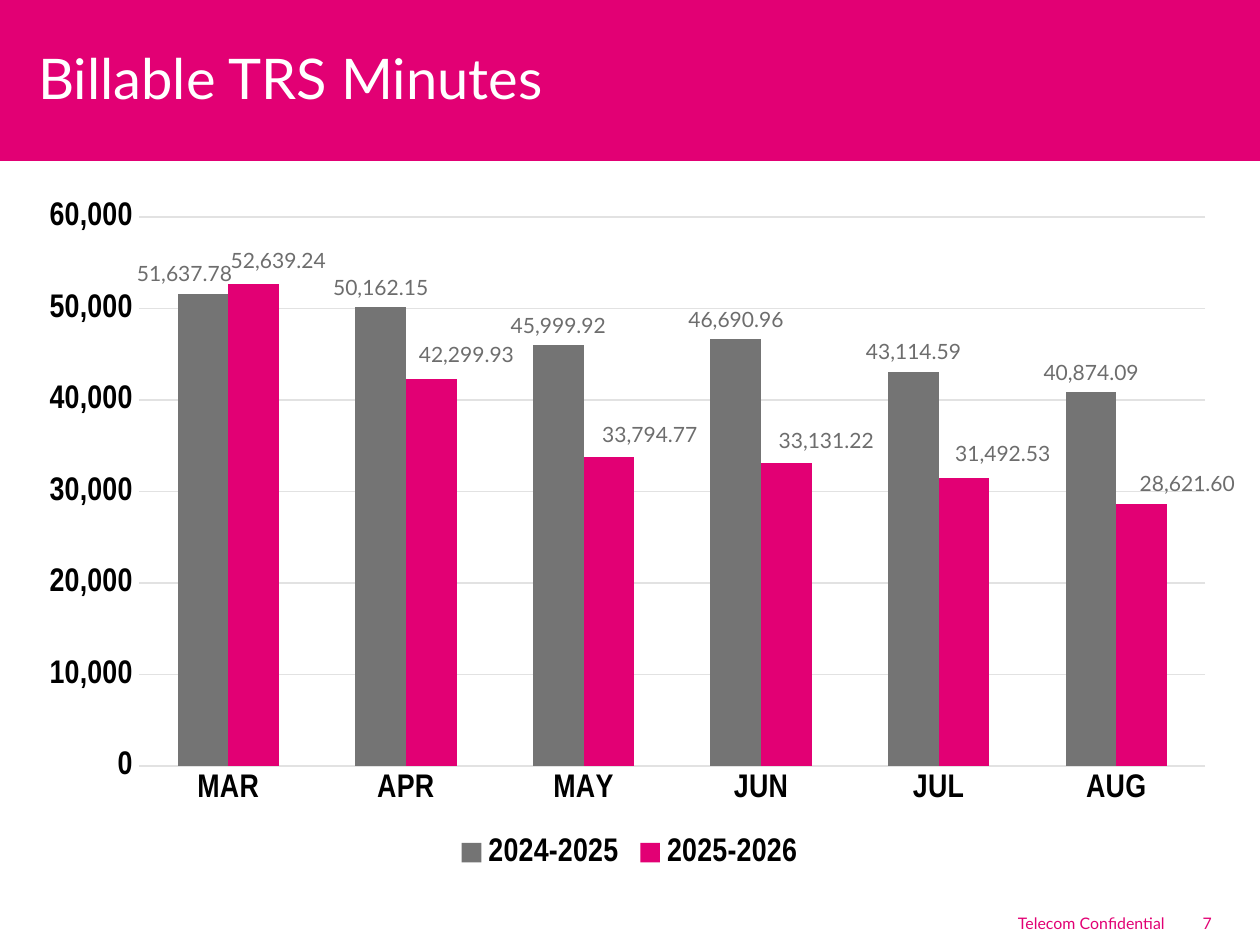
from dataclasses import dataclass
from lxml import etree
from pptx import Presentation
from pptx.chart.data import CategoryChartData
from pptx.dml.color import RGBColor
from pptx.enum.chart import XL_CHART_TYPE, XL_LABEL_POSITION, XL_LEGEND_POSITION, XL_TICK_MARK
from pptx.enum.shapes import MSO_SHAPE
from pptx.enum.text import MSO_ANCHOR, PP_ALIGN
from pptx.oxml.ns import qn
from pptx.util import Pt


@dataclass(frozen=True)
class Theme:
    magenta: RGBColor = RGBColor(0xE2, 0x00, 0x74)
    gray: RGBColor = RGBColor(0x74, 0x74, 0x74)
    label_gray: RGBColor = RGBColor(0x6D, 0x6D, 0x6D)
    grid: RGBColor = RGBColor(0xE2, 0xE2, 0xE2)
    white: RGBColor = RGBColor(0xFF, 0xFF, 0xFF)
    black: RGBColor = RGBColor(0x00, 0x00, 0x00)
    body_font: str = "Lato"
    axis_font: str = "Arial Narrow"
    title_size: float = 24
    axis_size: float = 14
    label_size: float = 9
    footer_size: float = 6.8


def style_font(font, name, size, color, bold=False):
    font.name, font.size, font.bold = name, Pt(size), bold
    font.color.rgb = color


def manual_layout(**settings):
    layout = etree.Element(qn("c:layout"))
    manual = etree.SubElement(layout, qn("c:manualLayout"))
    for tag, value in settings.items():
        etree.SubElement(manual, qn(f"c:{tag}")).set("val", str(value))
    return layout


class SlideBuilder:
    def __init__(self, slide, theme):
        self.slide, self.theme = slide, theme

    def set_text(self, shape, text, size, color, insets, align=PP_ALIGN.LEFT):
        frame = shape.text_frame
        frame.text = text
        frame.word_wrap = True
        frame.vertical_anchor = MSO_ANCHOR.MIDDLE
        frame.margin_left = frame.margin_right = Pt(insets[0])
        frame.margin_top = frame.margin_bottom = Pt(insets[1])
        frame.paragraphs[0].alignment = align
        style_font(frame.paragraphs[0].runs[0].font, self.theme.body_font, size, color)

    def band(self, left, top, width, height):
        band = self.slide.shapes.add_shape(
            MSO_SHAPE.RECTANGLE, Pt(left), Pt(top), Pt(width), Pt(height))
        band.shadow.inherit = False
        band.fill.solid()
        band.fill.fore_color.rgb = self.theme.magenta
        band.line.fill.background()
        # Put the band behind the title
        self.slide.shapes.title._element.addprevious(band._element)

    def title(self, text, left, top, width, height):
        title = self.slide.shapes.title
        title.left, title.top, title.width, title.height = map(Pt, (left, top, width, height))
        self.set_text(title, text, self.theme.title_size, self.theme.white, (5.6, 2.8))

    def footer(self, text, left, top, width, height, align=PP_ALIGN.LEFT):
        box = self.slide.shapes.add_textbox(Pt(left), Pt(top), Pt(width), Pt(height))
        self.set_text(box, text, self.theme.footer_size, self.theme.magenta, (4.2, 2.1), align)

    def column_chart(self, months, minutes, label_offsets, left, top, width, height, plot_box):
        theme = self.theme
        data = CategoryChartData(number_format="#,##0.00")
        data.categories = months
        for year, values in minutes.items():
            data.add_series(year, values)
        chart = self.slide.shapes.add_chart(
            XL_CHART_TYPE.COLUMN_CLUSTERED, Pt(left), Pt(top), Pt(width), Pt(height), data).chart
        style_font(chart.font, theme.body_font, 10, theme.label_gray)
        chart.has_title = False

        # Legend
        chart.has_legend = True
        chart.legend.position = XL_LEGEND_POSITION.BOTTOM
        chart.legend.include_in_layout = False

        # Axes
        for axis in (chart.category_axis, chart.value_axis):
            axis.major_tick_mark = axis.minor_tick_mark = XL_TICK_MARK.NONE
            axis.format.line.fill.background()
        for part in (chart.category_axis.tick_labels, chart.value_axis.tick_labels, chart.legend):
            style_font(part.font, theme.axis_font, theme.axis_size, theme.black, True)
        scale = chart.value_axis
        scale.minimum_scale, scale.maximum_scale, scale.major_unit = 0, 60000, 10000
        scale.tick_labels.number_format = "#,##0"
        scale.tick_labels.number_format_is_linked = False
        scale.has_major_gridlines = True
        scale.major_gridlines.format.line.color.rgb = theme.grid
        scale.major_gridlines.format.line.width = Pt(0.75)

        # Columns and their labels
        plot = chart.plots[0]
        plot.gap_width, plot.overlap, plot.vary_by_categories = 150, 0, False
        for series, color in zip(plot.series, (theme.gray, theme.magenta)):
            series.format.fill.solid()
            series.format.fill.fore_color.rgb = color
            labels = series.data_labels
            labels.show_value = True
            labels.number_format = "#,##0.00"
            labels.number_format_is_linked = False
            labels.position = XL_LABEL_POSITION.OUTSIDE_END
            style_font(labels.font, theme.body_font, theme.label_size, theme.label_gray)
            for index, (dx, dy) in enumerate(label_offsets[series.name]):
                label = series.points[index].data_label
                label.position = XL_LABEL_POSITION.OUTSIDE_END
                style_font(label.font, theme.body_font, theme.label_size, theme.label_gray)
                id_tag = series._element.xpath(f"c:dLbls/c:dLbl/c:idx[@val='{index}']")[0]
                number = etree.Element(qn("c:numFmt"), formatCode="#,##0.00", sourceLinked="0")
                id_tag.addnext(number)
                id_tag.addnext(manual_layout(x=dx / width, y=dy / height))

        # Plot area
        x, y, w, h = plot_box
        area = chart._chartSpace.xpath("c:chart/c:plotArea")[0]
        for automatic in area.findall(qn("c:layout")):
            area.remove(automatic)
        area.insert(0, manual_layout(
            layoutTarget="inner", xMode="edge", yMode="edge",
            x=x / width, y=y / height, w=w / width, h=h / height))


MONTHS = ["MAR", "APR", "MAY", "JUN", "JUL", "AUG"]
MINUTES = {
    "2024-2025": [51637.78, 50162.15, 45999.92, 46690.96, 43114.59, 40874.09],
    "2025-2026": [52639.24, 42299.93, 33794.77, 33131.22, 31492.53, 28621.60],
}
# Shift of each label from its column's top, in points
LABEL_OFFSETS = {
    "2024-2025": [(-8, 0)],
    "2025-2026": [(10.5, -2), (15, -2), (17.5, -1), (17, -1), (16.5, -2), (19.5, -0.5)],
}


def main():
    deck = Presentation()
    deck.slide_width, deck.slide_height = Pt(540), Pt(405)
    page = SlideBuilder(deck.slides.add_slide(deck.slide_layouts[5]), Theme())

    # Header
    page.band(0, 0, 540, 69)
    page.title("Billable TRS Minutes", 10.8, 11.5, 521.3, 43.2)

    # Minutes by month
    page.column_chart(MONTHS, MINUTES, LABEL_OFFSETS, 10.8, 80.6, 518.4, 294.5,
                      plot_box=(49, 12.5, 457, 235.3))

    # Footer
    page.footer("Telecom Confidential", 332, 389.5, 171.4, 12.2, PP_ALIGN.RIGHT)
    page.footer("7", 511.2, 389.5, 27.4, 12.2)

    deck.save("out.pptx")


if __name__ == "__main__":
    main()
